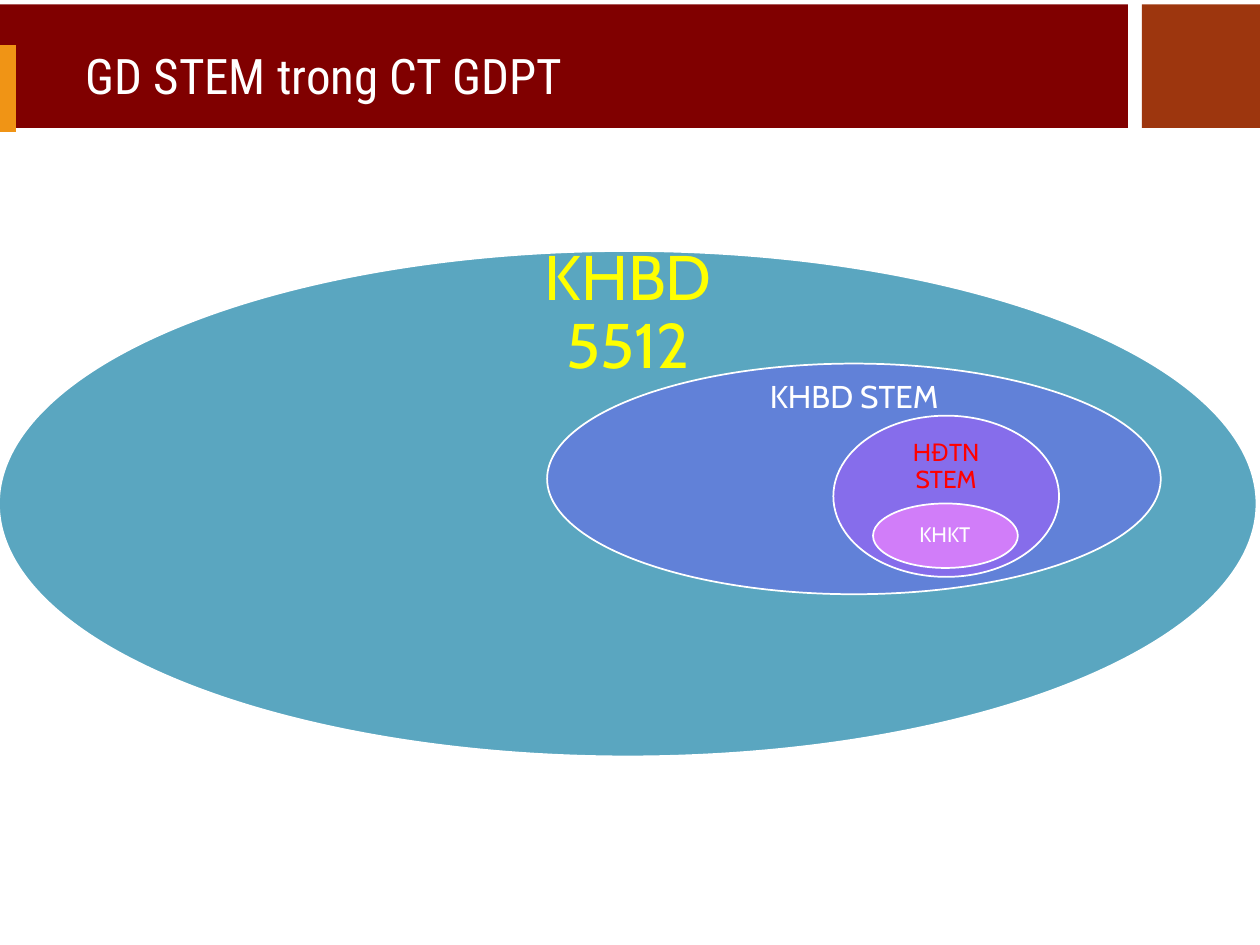
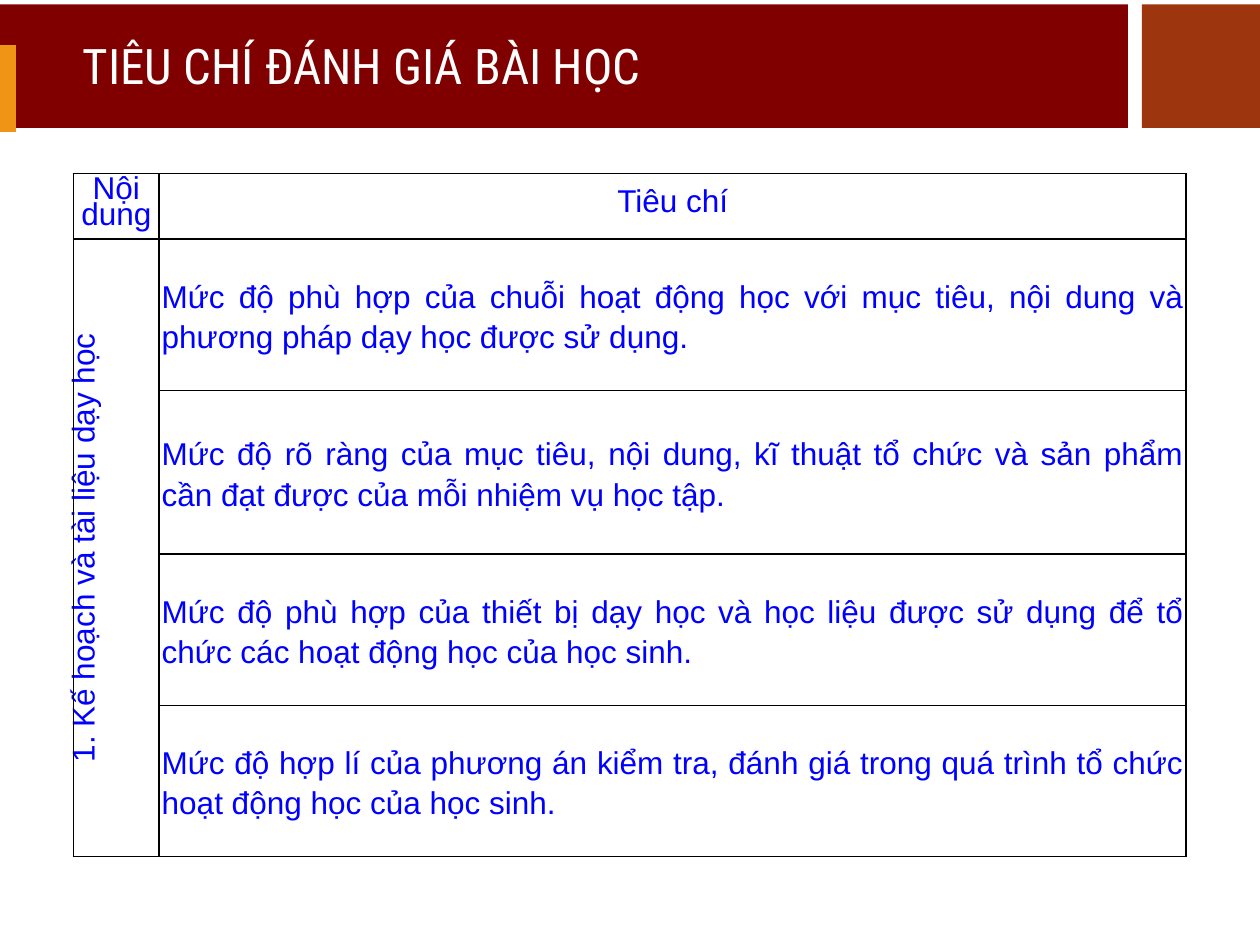
import lxml.etree
import pptx
import pptx.util
from pptx.dml.color import RGBColor
from pptx.enum.shapes import MSO_CONNECTOR, MSO_SHAPE
from pptx.enum.text import MSO_ANCHOR, PP_ALIGN
from pptx.oxml.ns import qn

Cm, Pt = pptx.util.Cm, pptx.util.Pt

# Colours and fonts
MAROON = RGBColor(0x80, 0x00, 0x00)
RUST = RGBColor(0x9D, 0x36, 0x0E)
ORANGE = RGBColor(0xF0, 0x94, 0x15)
WHITE = RGBColor(0xFF, 0xFF, 0xFF)
BLACK = RGBColor(0x00, 0x00, 0x00)
YELLOW = RGBColor(0xFF, 0xFF, 0x00)
RED = RGBColor(0xFF, 0x00, 0x00)
BLUE = RGBColor(0x00, 0x00, 0xFF)
TEAL = RGBColor(0x5A, 0xA6, 0xC0)
PERIWINKLE = RGBColor(0x61, 0x81, 0xD8)
VIOLET = RGBColor(0x86, 0x6D, 0xEB)
ORCHID = RGBColor(0xD1, 0x7D, 0xF9)
TITLE_FONT, DIAGRAM_FONT, TABLE_FONT = "Roboto Condensed", "Cabin", "Arial"

# Content: titles with their boxes (left, top, width, height in cm)
STEM_TITLE = ("GD STEM trong CT GDPT", (1.48, 0.08, 19.15, 3))
CRITERIA_TITLE = ("TIÊU CHÍ ĐÁNH GIÁ BÀI HỌC", (1.42, 0.46, 20.52, 1.83))

# Nested plans, outermost first:
# ellipse box, fill, label, label box, label inset, size, label colour
PLANS = [
    ((-0.02, 5.06, 25.35, 10.19), TEAL,
     "KHBD 5512", (9.12, 5.57, 7.09, 1.52), 0.71, 36, YELLOW),
    ((11.03, 7.33, 12.37, 4.65), PERIWINKLE,
     "KHBD STEM", (15.06, 7.6, 4.32, 0.84), 0.36, 18, WHITE),
    ((16.8, 8.38, 4.55, 3.25), VIOLET,
     "HĐTN STEM", (18.01, 9.05, 2.13, 0.74), 0.3, 14, RED),
    ((17.6, 10.15, 2.92, 1.3), ORCHID,
     "KHKT", (18.02, 10.47, 2.06, 0.64), 0.23, 12, WHITE),
]

HEADINGS = ["Nội dung", "Tiêu chí"]
TOPIC = "1. Kế hoạch và tài liệu dạy học"
CRITERIA = [
    "Mức độ phù hợp của chuỗi hoạt động học với mục tiêu, nội dung và "
    "phương pháp dạy học được sử dụng.",
    "Mức độ rõ ràng của mục tiêu, nội dung, kĩ thuật tổ chức và sản phẩm "
    "cần đạt được của mỗi nhiệm vụ học tập.",
    "Mức độ phù hợp của thiết bị dạy học và học liệu được sử dụng để tổ "
    "chức các hoạt động học của học sinh.",
    "Mức độ hợp lí của phương án kiểm tra, đánh giá trong quá trình tổ chức "
    "hoạt động học của học sinh.",
]
COLUMN_WIDTHS = [1.73, 20.7]
ROW_HEIGHTS = [1.32, 3.05, 3.3, 3.05, 3.05]


def place(box):
    return [Cm(length) for length in box]


def set_all(target, values):
    for name, value in values.items():
        setattr(target, name, value)


def write(frame, text, font, size, color, **paragraph_format):
    paragraph = frame.paragraphs[0]
    paragraph.add_run().text = text
    set_all(paragraph, paragraph_format)
    set_all(paragraph.runs[0].font, {"name": font, "size": Pt(size), "bold": False})
    paragraph.runs[0].font.color.rgb = color


def add_label(slide, box, inset, text, font, size, color, align):
    frame = slide.shapes.add_textbox(*place(box)).text_frame
    side, top = inset
    set_all(frame, {
        "word_wrap": True, "vertical_anchor": MSO_ANCHOR.MIDDLE,
        "margin_left": Cm(side), "margin_right": Cm(side),
        "margin_top": Cm(top), "margin_bottom": Cm(top)})
    write(frame, text, font, size, color, alignment=align, line_spacing=0.9)


def add_solid(slide, preset, box, fill, outline=None):
    solid = slide.shapes.add_shape(preset, *place(box))
    solid.shadow.inherit = False
    solid.fill.solid()
    solid.fill.fore_color.rgb = fill
    if outline is None:
        solid.line.fill.background()
    else:
        solid.line.color.rgb = outline
        solid.line.width = Pt(1)


def add_titled_slide(deck, title, title_box):
    slide = deck.slides.add_slide(deck.slide_layouts[6])
    # Header bands
    add_solid(slide, MSO_SHAPE.RECTANGLE, (0, 0.09, 22.74, 2.49), MAROON)
    accent = slide.shapes.add_connector(
        MSO_CONNECTOR.STRAIGHT, *place((0.14, 2.49, 0.14, 1.09)))
    accent.line.color.rgb = ORANGE
    accent.line.width = Pt(10)
    accent.line._get_or_add_ln().set("cap", "sq")
    lxml.etree.SubElement(accent._element.spPr, qn("a:effectLst"))
    add_solid(slide, MSO_SHAPE.RECTANGLE, (23.02, 0.09, 2.38, 2.49), RUST)
    # Title
    add_label(slide, title_box, (0.25, 0.13), title, TITLE_FONT, 28, WHITE,
              PP_ALIGN.LEFT)
    return slide


def add_borders(cell):
    properties = cell._tc.get_or_add_tcPr()
    for position, side in enumerate(("lnL", "lnR", "lnT", "lnB")):
        border = lxml.etree.Element(qn(f"a:{side}"), w=str(Pt(1)))
        fill = lxml.etree.SubElement(border, qn("a:solidFill"))
        lxml.etree.SubElement(fill, qn("a:srgbClr"), val=str(BLACK))
        properties.insert(position, border)


def fill_cell(cell, text, **paragraph_format):
    write(cell.text_frame, text, TABLE_FONT, 18, BLUE,
          space_after=Pt(10), **paragraph_format)


def build_stem_slide(deck):
    slide = add_titled_slide(deck, *STEM_TITLE)
    for ellipse_box, fill, label, label_box, inset, size, color in PLANS:
        add_solid(slide, MSO_SHAPE.OVAL, ellipse_box, fill, WHITE)
        add_label(slide, label_box, (inset, inset), label, DIAGRAM_FONT, size,
                  color, PP_ALIGN.CENTER)


def build_criteria_slide(deck):
    slide = add_titled_slide(deck, *CRITERIA_TITLE)
    table = slide.shapes.add_table(
        len(ROW_HEIGHTS), len(COLUMN_WIDTHS),
        *place((1.48, 3.5, sum(COLUMN_WIDTHS), sum(ROW_HEIGHTS)))).table
    set_all(table, {"first_row": False, "horz_banding": False})
    for column, width in zip(table.columns, COLUMN_WIDTHS):
        column.width = Cm(width)
    for row, height in zip(table.rows, ROW_HEIGHTS):
        row.height = Cm(height)

    # Cell frame shared by the whole table
    for cell in table.iter_cells():
        set_all(cell, {
            "margin_left": Cm(0.05), "margin_right": Cm(0.05),
            "margin_top": 0, "margin_bottom": 0,
            "vertical_anchor": MSO_ANCHOR.MIDDLE})
        cell.fill.background()
        add_borders(cell)

    # Headings, the upright topic and its criteria
    for column, heading in enumerate(HEADINGS):
        fill_cell(table.cell(0, column), heading,
                  alignment=PP_ALIGN.CENTER, line_spacing=Pt(15))
    topic_cell = table.cell(1, 0)
    topic_cell.merge(table.cell(len(CRITERIA), 0))
    topic_cell._tc.get_or_add_tcPr().set("vert", "vert270")
    fill_cell(topic_cell, TOPIC, alignment=PP_ALIGN.CENTER,
              line_spacing=Pt(16))
    for row, criterion in enumerate(CRITERIA, start=1):
        fill_cell(table.cell(row, 1), criterion,
                  alignment=PP_ALIGN.JUSTIFY, line_spacing=1.15)


def main():
    deck = pptx.Presentation()
    set_all(deck, {"slide_width": Cm(25.4), "slide_height": Cm(19.05)})
    build_stem_slide(deck)
    build_criteria_slide(deck)
    deck.save("out.pptx")


if __name__ == "__main__":
    main()
